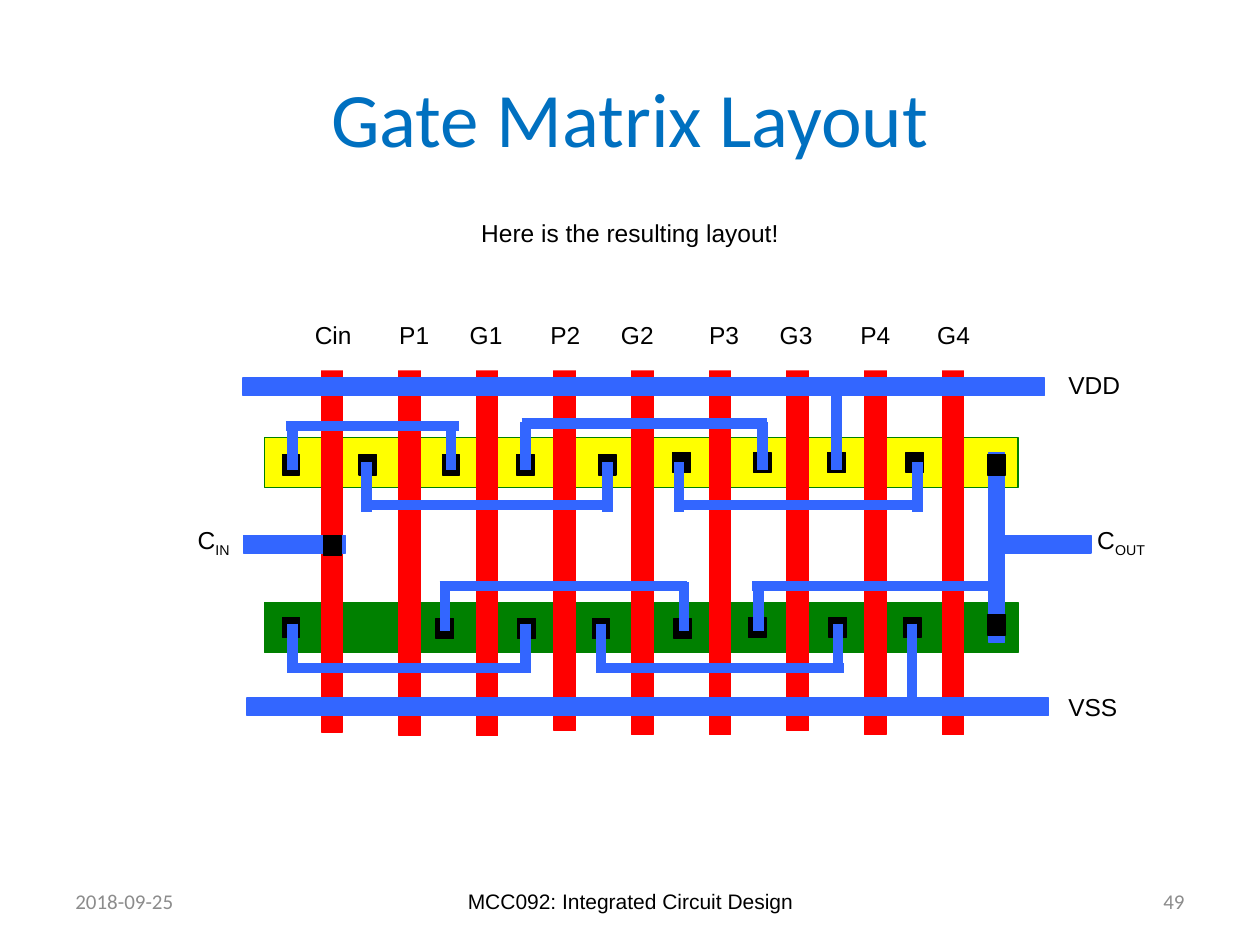
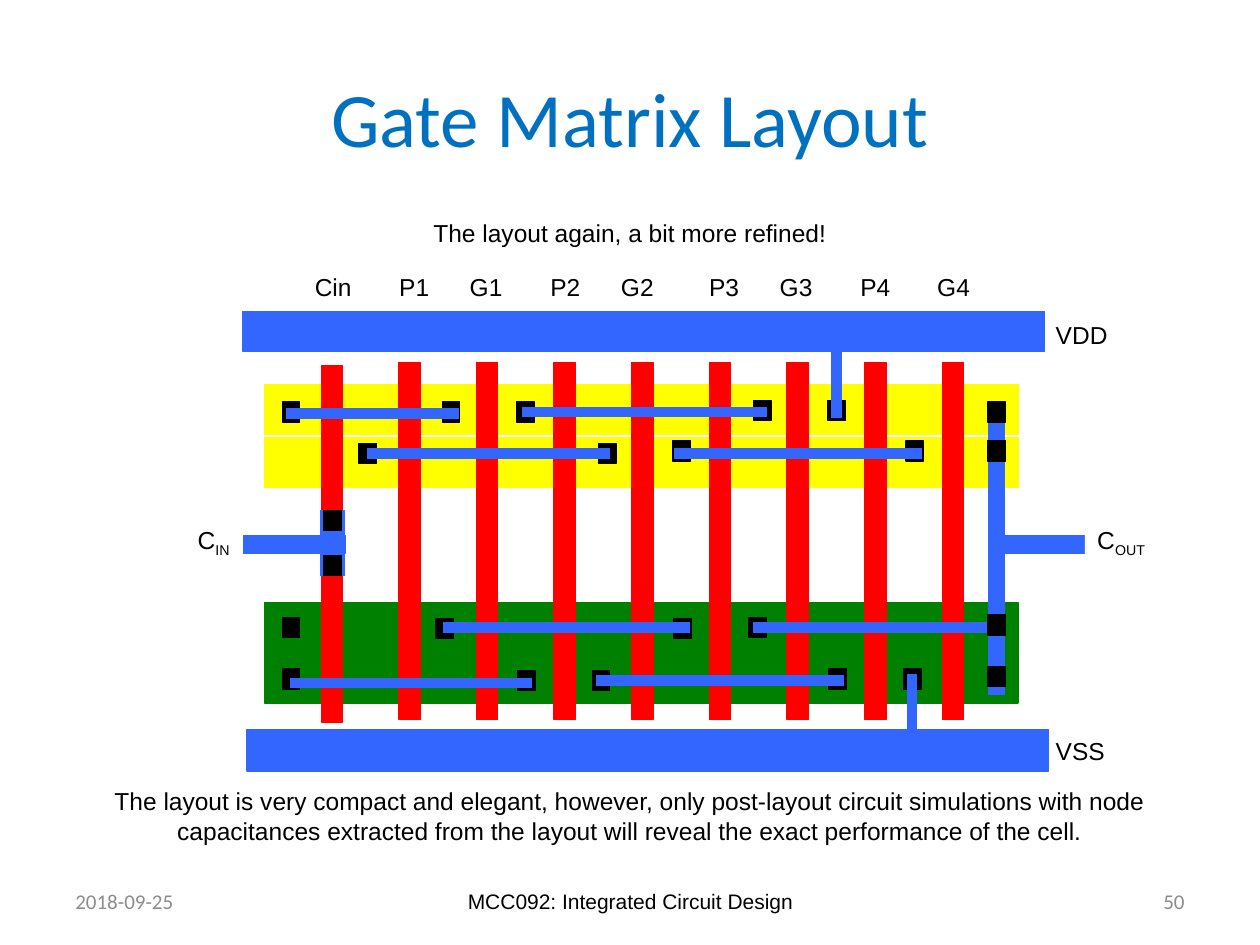
import pptx
import pptx.util
import pptx.dml.color
import pptx.enum.shapes
import pptx.enum.text
import lxml.etree
from pptx.oxml.ns import qn

Inches, Pt = pptx.util.Inches, pptx.util.Pt
ALIGN, ANCHOR = pptx.enum.text.PP_ALIGN, pptx.enum.text.MSO_ANCHOR
RECTANGLE = pptx.enum.shapes.MSO_SHAPE.RECTANGLE
STRAIGHT = pptx.enum.shapes.MSO_CONNECTOR.STRAIGHT

COLORS = {"title": "0070C0", "text": "000000", "muted": "8C8C8C", "paper": "FFFFFF",
          "pmos": "FFFF00", "nmos": "008000", "poly": "FF0000", "metal": "3366FF",
          "contact": "000000"}
TITLE = "Gate Matrix Layout"
COURSE = "MCC092: Integrated Circuit Design"
DATE = "2018-09-25"
GATES = ["Cin", "P1", "G1", "P2", "G2", "P3", "G3", "P4", "G4"]
GATE_TABS = [0.67, 1.23, 1.87, 2.43, 3.13, 3.69, 4.33, 4.94]

POLY_LEFT, POLY_PITCH, POLY_WIDTH = 2.55, 0.616, 0.17
STRIP_LEFT, STRIP_WIDTH, STRIP_HEIGHT = 2.1, 5.98, 0.4
CONTACT_WIDTH, CONTACT_HEIGHT = 0.14, 0.16
WIRE_WEIGHT, VIA_WEIGHT = 6, 14
COLUMN_LEFT, COLUMN_WIDTH = 7.85, 0.12
COLUMN_CONTACT = 7.84
VIA_LEFT = 2.57


def strips(*rows):
    return [(STRIP_LEFT, top, STRIP_WIDTH, STRIP_HEIGHT, fill, line)
            for top, fill, line in rows]


def polys(tops, height):
    return [(POLY_LEFT + i * POLY_PITCH, top, POLY_WIDTH, height, "poly", "poly")
            for i, top in enumerate(tops)]


def rails(*rows):
    return [(left, top, 6.36, height, "metal", "metal") for left, top, height in rows]


def contacts(rows):
    return [(left, top, CONTACT_WIDTH, CONTACT_HEIGHT, "contact", "contact")
            for top, lefts in rows.items() for left in lefts]


def column(top, height):
    return [(COLUMN_LEFT, top, COLUMN_WIDTH, height, "metal", "metal")]


def tracks(*rows):
    return [(left, y, right, y) for left, right, y in rows]


def legs(rows):
    return [(x, top, x, bottom) for (top, bottom), xs in rows.items() for x in xs]


PORTS = [(left, 4.25, 0.81, 0.14, "metal", "metal") for left in (1.93, COLUMN_LEFT)]
C_IN = [(1.47, 4.12, 0.79, "C", "IN", None)]
C_OUT = [(8.61, 4.12, 0.79, "C", "OUT", "paper")]


def cell_labels(gates_top, rail_left, vdd_top, vss_top):
    return [(2.4, gates_top, 6.54, "\t".join(GATES), "", "paper"),
            (rail_left, vdd_top, 0.79, "VDD", "", "paper"),
            (rail_left, vss_top, 0.79, "VSS", "", "paper")]


SLIDES = [
    {"number": "49",
     "notes": [(2.54, 1.68, 4.92, "Here is the resulting layout!")],
     "layers": [
         ("bars", strips((3.47, "pmos", "nmos"), (4.78, "nmos", "nmos"))),
         ("bars", polys([2.86, 2.89, 2.89, 2.85, 2.88, 2.88, 2.85, 2.88, 2.88], 2.95)),
         ("bars", rails((1.93, 3, 0.14), (1.96, 5.54, 0.14))),
         ("labels", cell_labels(2.49, 8.38, 2.89, 5.44) + C_OUT + C_IN),
         ("bars", PORTS + column(3.59, 1.51)),
         ("bars", contacts({
             3.59: [5.34, 5.98, 6.57, 7.19],
             3.61: [2.24, 2.85, 3.51, 4.1, 4.75, COLUMN_CONTACT],
             4.25: [VIA_LEFT],
             4.88: [COLUMN_CONTACT],
             4.9: [2.24, 5.94, 6.58, 7.17],
             4.91: [3.46, 4.11, 4.7, 5.35]})),
         ("wires", legs({
             (3.35, 3.73): [2.32, 3.58, 4.17, 6.05],
             (3.13, 3.73): [6.64],
             (3.67, 4.06): [2.91, 4.82, 5.39, 7.28],
             (4.62, 5.01): [3.53, 5.43, 6.02],
             (4.95, 5.34): [2.32, 4.17, 4.77, 6.65],
             (4.95, 5.55): [7.24]})),
         ("wires", tracks(
             (2.27, 3.64, 3.38), (4.14, 6.09, 3.36),
             (2.91, 4.84, 4.01), (5.35, 7.32, 4.01),
             (3.49, 5.45, 4.65), (5.97, 7.9, 4.65),
             (2.29, 4.21, 5.3), (4.73, 6.7, 5.3))),
     ]},
    {"number": "50",
     "notes": [(2.54, 1.68, 4.92, "The layout again, a bit more refined!"),
               (0.66, 6.19, 8.68,
                "The layout is very compact and elegant, however, only post-layout circuit "
                "simulations with node capacitances extracted from the layout will reveal "
                "the exact performance of the cell.")],
     "layers": [
         ("labels", cell_labels(2.11, 8.28, 2.49, 5.79)),
         ("bars", strips((3.47, "pmos", "pmos"), (4.78, "nmos", "nmos"),
                         (3.05, "pmos", "pmos"), (5.18, "nmos", "nmos"))),
         ("group", polys([2.9] + [2.88] * 8, 2.83)),
         ("bars", rails((1.93, 2.47, 0.32), (1.96, 5.79, 0.33))),
         ("bars", contacts({
             3.18: [5.98, 6.57],
             3.19: [2.24, 3.51, 4.1],
             3.5: [5.34, 7.19],
             3.52: [2.85, 4.75],
             4.9: [2.24, 5.94],
             4.91: [3.46, 5.35],
             5.31: [2.24, 6.58, 7.17],
             5.32: [4.11, 4.7]})),
         ("wires", legs({(2.71, 3.32): [6.64], (5.35, 5.96): [7.24]})),
         ("wires", tracks(
             (2.27, 3.64, 3.28), (4.14, 6.09, 3.27),
             (2.91, 4.84, 3.6), (5.35, 7.32, 3.6),
             (3.52, 5.48, 4.98), (5.98, 7.9, 4.98),
             (2.3, 4.22, 5.42), (4.73, 6.7, 5.4))),
         ("bars", column(3.19, 2.32)),
         ("bars", contacts({top: [COLUMN_CONTACT] for top in (3.19, 3.5, 4.88, 5.29)})),
         ("bars", PORTS),
         ("via", [(4.25, 4.05, 4.41)]),
         ("labels", C_OUT + C_IN),
     ]},
]


def rgb(name):
    return pptx.dml.color.RGBColor.from_string(COLORS[name])


def apply(target, values):
    for name, value in values.items():
        setattr(target, name, value)


def write(shape, text, size=14, font="Arial", color="text", align=ALIGN.LEFT,
          anchor=ANCHOR.TOP, subscript=""):
    apply(shape.text_frame, {"word_wrap": True, "vertical_anchor": anchor})
    paragraph = shape.text_frame.paragraphs[0]
    paragraph.alignment = align
    for part in filter(None, (text, subscript)):
        run = paragraph.add_run()
        run.text = part
        apply(run.font, {"size": Pt(size), "name": font})
        run.font.color.rgb = rgb(color)
    if subscript:
        run._r.get_or_add_rPr().set("baseline", "-25000")
    return paragraph


def add_text(shapes, left, top, width, height, text, **style):
    write(shapes.add_textbox(*map(Inches, (left, top, width, height))), text, **style)


def add_bar(shapes, left, top, width, height, fill, line=None):
    bar = shapes.add_shape(RECTANGLE, *map(Inches, (left, top, width, height)))
    bar.shadow.inherit = False
    bar.fill.solid()
    bar.fill.fore_color.rgb = rgb(fill)
    if line:
        bar.line.color.rgb = rgb(line)
        bar.line.width = Pt(0.75)
    else:
        bar.line.fill.background()
    return bar


def add_wire(shapes, x1, y1, x2, y2, weight=WIRE_WEIGHT):
    wire = shapes.add_connector(STRAIGHT, *map(Inches, (x1, y1, x2, y2)))
    wire.line.color.rgb = rgb("metal")
    wire.line.width = Pt(weight)
    lxml.etree.SubElement(wire._element.spPr, qn("a:effectLst"))
    return wire


def add_label(shapes, left, top, width, text, subscript, fill):
    if fill:
        label = add_bar(shapes, left, top, width, 0.45, fill)
    else:
        label = shapes.add_textbox(*map(Inches, (left, top, width, 0.45)))
    paragraph = write(label, text, subscript=subscript)
    if "\t" in text:
        stops = lxml.etree.SubElement(paragraph._p.get_or_add_pPr(), qn("a:tabLst"))
        for position in GATE_TABS:
            lxml.etree.SubElement(stops, qn("a:tab"), pos=str(Inches(position)), algn="l")


def add_via(shapes, middle, upper, lower):
    via = shapes.add_group_shape().shapes
    center = VIA_LEFT + CONTACT_WIDTH / 2
    add_bar(via, *contacts({middle: [VIA_LEFT]})[0])
    strap = add_wire(via, center, lower + CONTACT_HEIGHT, center, upper, VIA_WEIGHT)
    bottom, top = [add_bar(via, *cut) for cut in contacts({lower: [VIA_LEFT],
                                                           upper: [VIA_LEFT]})]
    strap.begin_connect(bottom, 2)
    strap.end_connect(top, 0)


DRAW = {"bars": add_bar, "group": add_bar, "wires": add_wire, "labels": add_label,
        "via": add_via}


def build_slide(deck, content):
    slide = deck.slides.add_slide(deck.slide_layouts[5])
    shapes = slide.shapes
    apply(shapes.title, {"left": Inches(0.5), "top": Inches(0.3),
                         "width": Inches(9), "height": Inches(1.25)})
    write(shapes.title, TITLE, 44, "Calibri", "title", ALIGN.CENTER, ANCHOR.MIDDLE)
    for kind, items in content["layers"]:
        layer = shapes.add_group_shape().shapes if kind == "group" else shapes
        for item in items:
            DRAW[kind](layer, *item)
    for left, top, width, text in content["notes"]:
        add_text(shapes, left, top, width, 0.66, text, align=ALIGN.CENTER)
    for left, width, text, font, color, align in (
            (0.5, 2.33, DATE, "Calibri", "muted", ALIGN.LEFT),
            (3.42, 3.17, COURSE, "Arial", "text", ALIGN.CENTER),
            (7.17, 2.33, content["number"], "Calibri", "muted", ALIGN.RIGHT)):
        add_text(shapes, left, 6.95, width, 0.4, text, size=12, font=font, color=color,
                 align=align, anchor=ANCHOR.MIDDLE)


def main():
    deck = pptx.Presentation()
    apply(deck, {"slide_width": Inches(10), "slide_height": Inches(7.5)})
    for content in SLIDES:
        build_slide(deck, content)
    deck.save("out.pptx")


if __name__ == "__main__":
    main()
